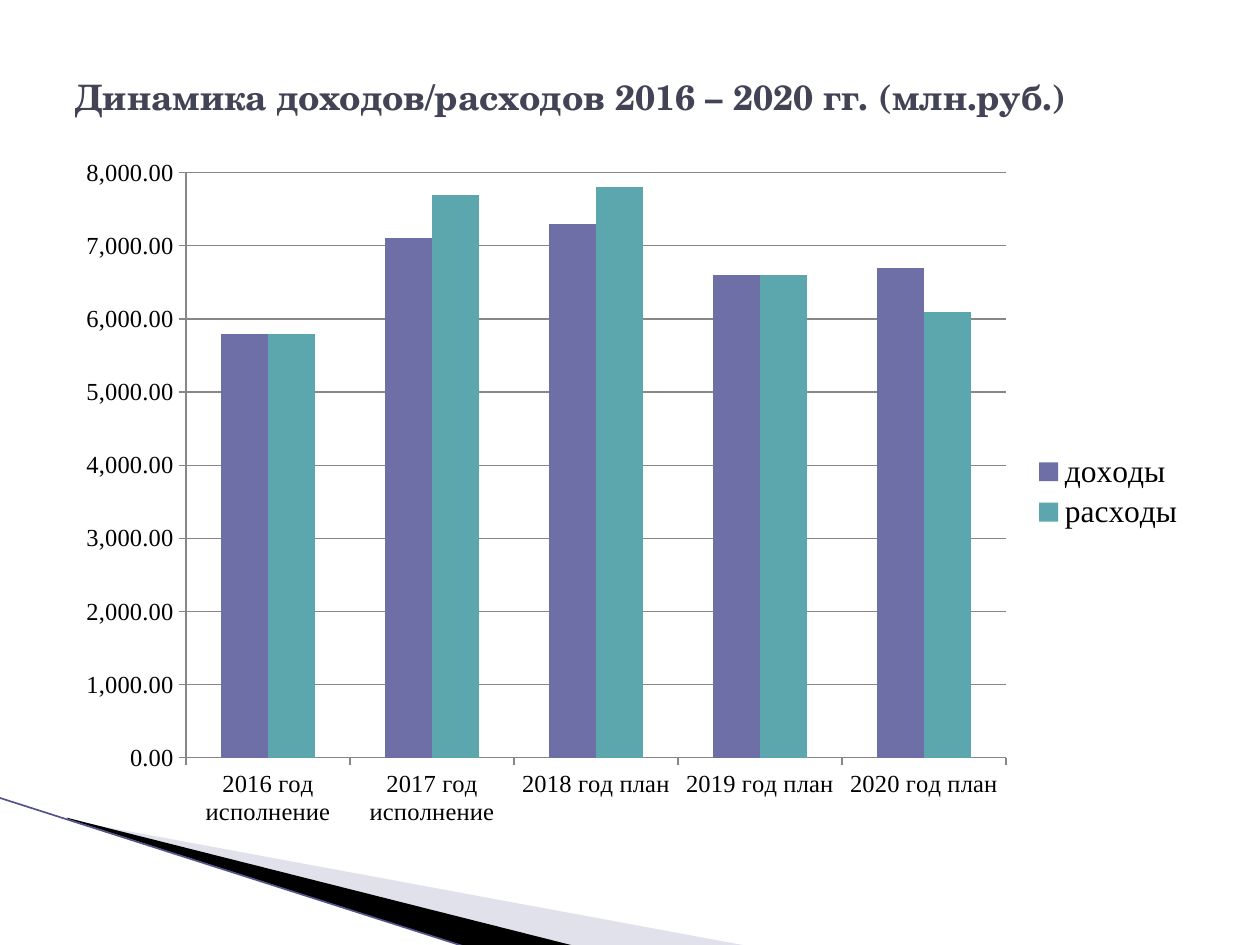
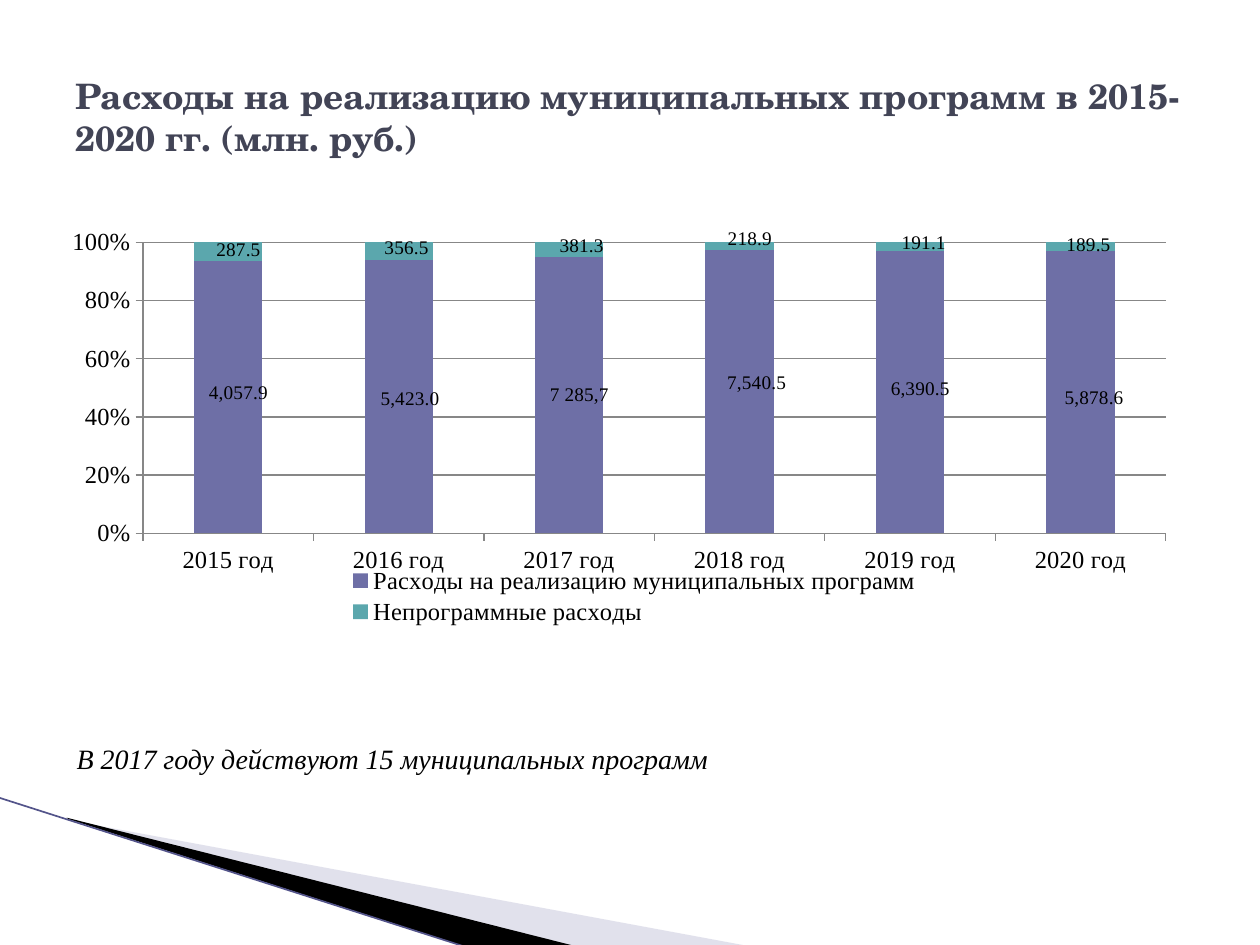
from collections import namedtuple

from lxml import etree
from pptx import Presentation
from pptx import util as u
from pptx.chart import data as chart_data
from pptx.dml.color import RGBColor
from pptx.enum import chart as ch
from pptx.enum import shapes, text
from pptx.oxml import parse_xml
from pptx.oxml.ns import nsdecls, qn

Box = namedtuple("Box", "left top width height")

CELL = u.Inches(0.1)
COLUMNS, ROWS = 100, 75
CORNER = Box(0, 63.3, 59.5, 11.8)
SERIF, TITLE_FONT = "Times New Roman", "TeX Gyre Schola"
INK, TITLE_INK, GRID = "000000", "424456", "878787"
EDGE, PALE = "53548A", "B6B6D1"
SERIES_COLORS = ("6E6FA6", "5BA7AD")

BUDGET_YEARS = ("2016 год исполнение", "2017 год исполнение",
                "2018 год план", "2019 год план", "2020 год план")
BUDGET = {
    "доходы": (5800, 7100, 7300, 6600, 6700),
    "расходы": (5800, 7700, 7800, 6600, 6100),
}
PROGRAMMES = {
    "Расходы на реализацию муниципальных программ":
        (4057.9, 5423.0, 7285.7, 7540.5, 6390.5, 5878.6),
    "Непрограммные расходы": (287.5, 356.5, 381.3, 218.9, 191.1, 189.5),
}
LABEL_SHIFTS = (
    ((0.9, -1.2), (1, 0.6), (0.9, 0), (1.5, -2.2), (0.9, -0.7), (1.2, 1.4)),
    ((0.9, -0.4), (0.7, -0.7), (1.1, -0.8), (0.9, -1.7), (1.2, -0.8), (0.7, -0.4)),
)
CUSTOM_LABELS = {(0, 2): "7 285,7"}


def color(hex_string):
    """Turn a hex string into a colour."""
    return RGBColor.from_string(hex_string)


def cells(*lengths):
    """Convert grid cells to slide lengths."""
    return [round(length * CELL) for length in lengths]


def style_font(font, name, size, ink=INK, bold=False, italic=False):
    """Set every trait of a font."""
    font.name, font.size = name, u.Pt(size)
    font.bold, font.italic = bold, italic
    font.color.rgb = color(ink)


def add_text(page, box, wording, anchor, align, **traits):
    """Place one paragraph in a wrapping text box."""
    frame = page.shapes.add_textbox(*cells(*box)).text_frame
    frame.word_wrap = True
    frame.vertical_anchor = anchor
    para = frame.paragraphs[0]
    para.text, para.alignment = wording, align
    style_font(para.font, **traits)


def add_title(page, box, wording):
    """Place the slide title."""
    add_text(page, box, wording, text.MSO_ANCHOR.MIDDLE, text.PP_ALIGN.LEFT,
             name=TITLE_FONT, size=20, ink=TITLE_INK, bold=True)


def add_wedge(page, box, points, fill, opacity=100):
    """Draw a filled outline whose points are relative to the box."""
    corners = [cells(box.left + x, box.top + y) for x, y in points]
    builder = page.shapes.build_freeform(*corners[0])
    builder.add_line_segments(corners[1:], close=True)
    wedge = builder.convert_to_shape()
    wedge.shadow.inherit = False
    wedge.fill.solid()
    wedge.fill.fore_color.rgb = color(fill)
    wedge.line.fill.background()
    if opacity < 100:
        tone = wedge.fill._xPr.find(".//" + qn("a:srgbClr"))
        etree.SubElement(tone, qn("a:alpha"), val=str(opacity * 1000))


def add_corner(page, box):
    """Draw the folded corner shared by the slides."""
    add_wedge(page, box, ((5.5, 1.8), (59.5, 11.8), (45.6, 11.8), (5.5, 1.7)), PALE, 40)
    add_wedge(page, box, ((5.3, 1.6), (45.7, 11.8), (37.2, 11.9), (5.4, 1.7)), INK)
    start = cells(box.left - 0.1, box.top)
    end = cells(box.left + 37.1, box.top + 11.9)
    edge = page.shapes.add_connector(shapes.MSO_CONNECTOR.STRAIGHT, *start, *end)
    edge.line.color.rgb = color(EDGE)
    edge.line.width = u.Pt(0.95)
    etree.SubElement(edge._element.spPr, qn("a:effectLst"))


def manual_layout(x, y, width=None, height=None, inner=False):
    """Build a chart layout from percentages of the chart's size."""
    settings = []
    if inner:
        settings.append(("layoutTarget", "inner"))
    if width is not None:
        settings += [("xMode", "edge"), ("yMode", "edge")]
    settings += [("x", x / 100), ("y", y / 100)]
    if width is not None:
        settings += [("w", width / 100), ("h", height / 100)]
    items = "".join(f'<c:{tag} val="{value}"/>' for tag, value in settings)
    return parse_xml(f'<c:layout {nsdecls("c")}><c:manualLayout>{items}'
                     "</c:manualLayout></c:layout>")


def set_plot_area(chart, *percentages):
    """Fix the inner plot area of a chart."""
    area = chart._chartSpace.chart.plotArea
    for layout in area.findall(qn("c:layout")):
        area.remove(layout)
    area.insert(0, manual_layout(*percentages, inner=True))


def add_columns(page, box, kind, years, rows, number_format, axis_format, top, step):
    """Place a column chart with the shared axes and colours."""
    table = chart_data.CategoryChartData(number_format=number_format)
    table.categories = years
    for name, values in rows.items():
        table.add_series(name, values)
    chart = page.shapes.add_chart(kind, *cells(*box), table).chart
    style_font(chart.font, SERIF, 14)
    chart.has_title = False
    chart.has_legend = True
    chart.legend.include_in_layout = False
    plot = chart.plots[0]
    plot.gap_width, plot.vary_by_categories = 150, False
    for series, fill in zip(plot.series, SERIES_COLORS):
        series.format.fill.solid()
        series.format.fill.fore_color.rgb = color(fill)
    for axis in (chart.category_axis, chart.value_axis):
        axis.major_tick_mark = ch.XL_TICK_MARK.OUTSIDE
        axis.format.line.color.rgb = color(GRID)
    scale = chart.value_axis
    scale.minimum_scale, scale.maximum_scale, scale.major_unit = 0, top, step
    scale.has_major_gridlines = True
    scale.major_gridlines.format.line.color.rgb = color(GRID)
    scale.tick_labels.number_format = axis_format
    scale.tick_labels.number_format_is_linked = False
    return chart


def add_value_labels(series, row, shifts):
    """Label each point of a series, shifted from the bar's middle."""
    for index in range(len(shifts)):
        label = series.points[index].data_label
        wording = CUSTOM_LABELS.get((row, index))
        if wording:
            para = label.text_frame.paragraphs[0]
            para.text = wording
            style_font(para.font, SERIF, 11)
        else:
            style_font(label.font, SERIF, 11)
    for node, shift in zip(series._element.iter(qn("c:dLbl")), shifts):
        for layout in node.findall(qn("c:layout")):
            node.remove(layout)
        node.find(qn("c:idx")).addnext(manual_layout(*shift))


def add_budget_chart(page, box):
    """Place the clustered chart of income and spending."""
    chart = add_columns(page, box, ch.XL_CHART_TYPE.COLUMN_CLUSTERED, BUDGET_YEARS,
                        BUDGET, "#,##0.00", "#,##0.00", 8000, 1000)
    chart.plots[0].overlap = 0
    chart.legend.position = ch.XL_LEGEND_POSITION.RIGHT
    style_font(chart.legend.font, SERIF, 18)
    set_plot_area(chart, 10.75, 4, 72.3, 84.3)


def add_programme_chart(page, box):
    """Place the full-height stacked chart of programme spending."""
    years = [f"{year} год" for year in range(2015, 2021)]
    chart = add_columns(page, box, ch.XL_CHART_TYPE.COLUMN_STACKED_100, years,
                        PROGRAMMES, "#,##0.0", "0%", 1, 0.2)
    chart.plots[0].overlap = 100
    chart.legend.position = ch.XL_LEGEND_POSITION.BOTTOM
    style_font(chart.legend.font, SERIF, 14)
    position = chart.legend._element.find(qn("c:legendPos"))
    position.addnext(manual_layout(24.5, 83.5, 51, 16))
    set_plot_area(chart, 7, 5.3, 89.5, 70.9)
    for row, (series, shifts) in enumerate(zip(chart.plots[0].series, LABEL_SHIFTS)):
        add_value_labels(series, row, shifts)


def add_page(deck, title, title_box):
    """Add a blank slide with the shared corner and title."""
    page = deck.slides.add_slide(deck.slide_layouts[6])
    add_corner(page, CORNER)
    add_title(page, title_box, title)
    return page


def main():
    """Build and save the deck."""
    deck = Presentation()
    deck.slide_width, deck.slide_height = cells(COLUMNS, ROWS)

    page = add_page(deck, "Динамика доходов/расходов 2016 – 2020 гг. (млн.руб.)",
                    Box(5, 3, 89.1, 9.3))
    add_budget_chart(page, Box(5.1, 11.5, 90, 55.1))

    page = add_page(deck, "Расходы на реализацию муниципальных программ "
                    "в 2015-2020 гг. (млн. руб.)", Box(5, 3, 90, 12.5))
    add_programme_chart(page, Box(5, 17.5, 90.7, 32.6))
    add_text(page, Box(5.1, 58.4, 92.9, 3.7),
             "В 2017 году действуют 15 муниципальных программ",
             text.MSO_ANCHOR.TOP, text.PP_ALIGN.JUSTIFY,
             name=SERIF, size=16, italic=True)

    deck.save("out.pptx")


if __name__ == "__main__":
    main()
